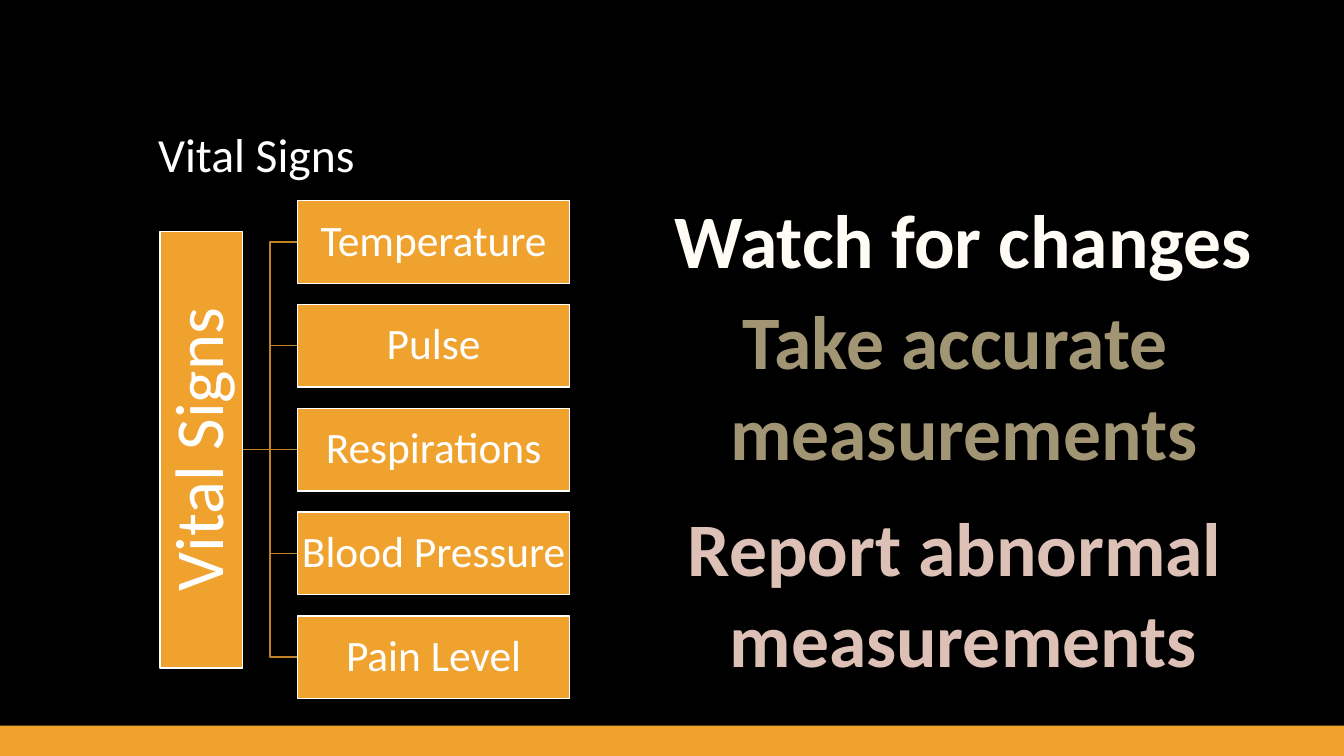
from pptx import Presentation
from pptx import util as u
from pptx.dml.color import RGBColor
from pptx.enum import shapes, text
from pptx.oxml.ns import qn

PX = 9144  # EMU per px, 100 px to the inch
ACCENT, LINE, WHITE, BLACK = "F0A22E", "C08225", "FFFFFF", "000000"
CENTER, LEFT = text.PP_ALIGN.CENTER, text.PP_ALIGN.LEFT


def rgb(hex_color):
    return RGBColor.from_string(hex_color)


def px(*lengths):
    return [u.Emu(n * PX) for n in lengths]


def set_formats(obj, formats):
    for name, value in formats.items():
        setattr(obj, name, value)


class Deck:
    font = "Calibri"

    def __init__(self, width, height, background):
        self.prs = Presentation()
        self.prs.slide_width, self.prs.slide_height = px(width, height)
        self.s = self.prs.slides.add_slide(self.prs.slide_layouts[6])
        fill = self.s.background.fill
        fill.solid()
        fill.fore_color.rgb = rgb(background)

    def fill_text(self, sp, words, size, color=WHITE, bold=False, align=CENTER,
                  spacing=0.9, **frame):
        tf = sp.text_frame
        set_formats(tf, {"word_wrap": True,
                         "vertical_anchor": text.MSO_ANCHOR.MIDDLE, **frame})
        p = tf.paragraphs[0]
        set_formats(p, {"alignment": align, "line_spacing": spacing, "text": words})
        for r in p.runs:
            set_formats(r.font, {"name": self.font, "size": u.Pt(size), "bold": bold})
            r.font.color.rgb = rgb(color)

    def box(self, x, y, w, h, outline=None, rotation=0):
        sp = self.s.shapes.add_shape(shapes.MSO_SHAPE.RECTANGLE, *px(x, y, w, h))
        sp.shadow.inherit = False
        sp.rotation = rotation
        sp.fill.solid()
        sp.fill.fore_color.rgb = rgb(ACCENT)
        if outline:
            sp.line.color.rgb = rgb(outline)
            sp.line.width = u.Pt(1)
        else:
            sp.line.fill.background()
        return sp

    def label_box(self, words, size, inset, *place, rotation=0):
        sp = self.box(*place, outline=WHITE, rotation=rotation)
        sides = ("margin_left", "margin_top", "margin_right", "margin_bottom")
        self.fill_text(sp, words, size, **dict.fromkeys(sides, px(inset)[0]))

    def text_box(self, words, size, *place, **formats):
        self.fill_text(self.s.shapes.add_textbox(*px(*place)), words, size, **formats)

    def branch(self, x1, y1, x2, y2):
        kind = shapes.MSO_CONNECTOR
        route = kind.STRAIGHT if y1 == y2 else kind.ELBOW
        sp = self.s.shapes.add_connector(route, *px(x1, y1, x2, y2))
        sp.line.color.rgb = rgb(LINE)
        sp.line.width = u.Pt(1)
        sp._element.spPr.append(sp._element.makeelement(qn("a:effectLst"), {}))


def main():
    deck = Deck(1333, 750, BLACK)
    deck.box(0, 720, 1333, 30)
    deck.text_box("Vital Signs", 34, 147, 51, 1040, 135, align=LEFT,
                  vertical_anchor=text.MSO_ANCHOR.BOTTOM)

    signs = ["Temperature", "Pulse", "Respirations", "Blood Pressure", "Pain Level"]
    left, top, width, height, pitch = 295, 199, 270, 82, 103
    tops = [top + i * pitch for i in range(len(signs))]
    root_x, root_y = 241, tops[2] + height // 2
    for y in tops:
        deck.branch(root_x, root_y, left, y + height // 2)
    deck.label_box("Vital Signs", 49, 3, -17, tops[2], 433, height, rotation=270)
    for sign, y in zip(signs, tops):
        deck.label_box(sign, 31, 2, left, y, width, height)

    advice = [
        ("Watch for changes", "FEFCF4", (656, 186, 599, 101)),
        ("Take accurate \vmeasurements", "A19574", (712, 287, 488, 192)),
        ("Report abnormal \vmeasurements", "DDC0B6", (669, 492, 573, 192)),
    ]
    for words, color, place in advice:
        deck.text_box(words, 54, *place, color=color, bold=True, spacing=1.0,
                      word_wrap=False, vertical_anchor=text.MSO_ANCHOR.TOP,
                      auto_size=text.MSO_AUTO_SIZE.SHAPE_TO_FIT_TEXT)
    deck.prs.save("out.pptx")


if __name__ == "__main__":
    main()
